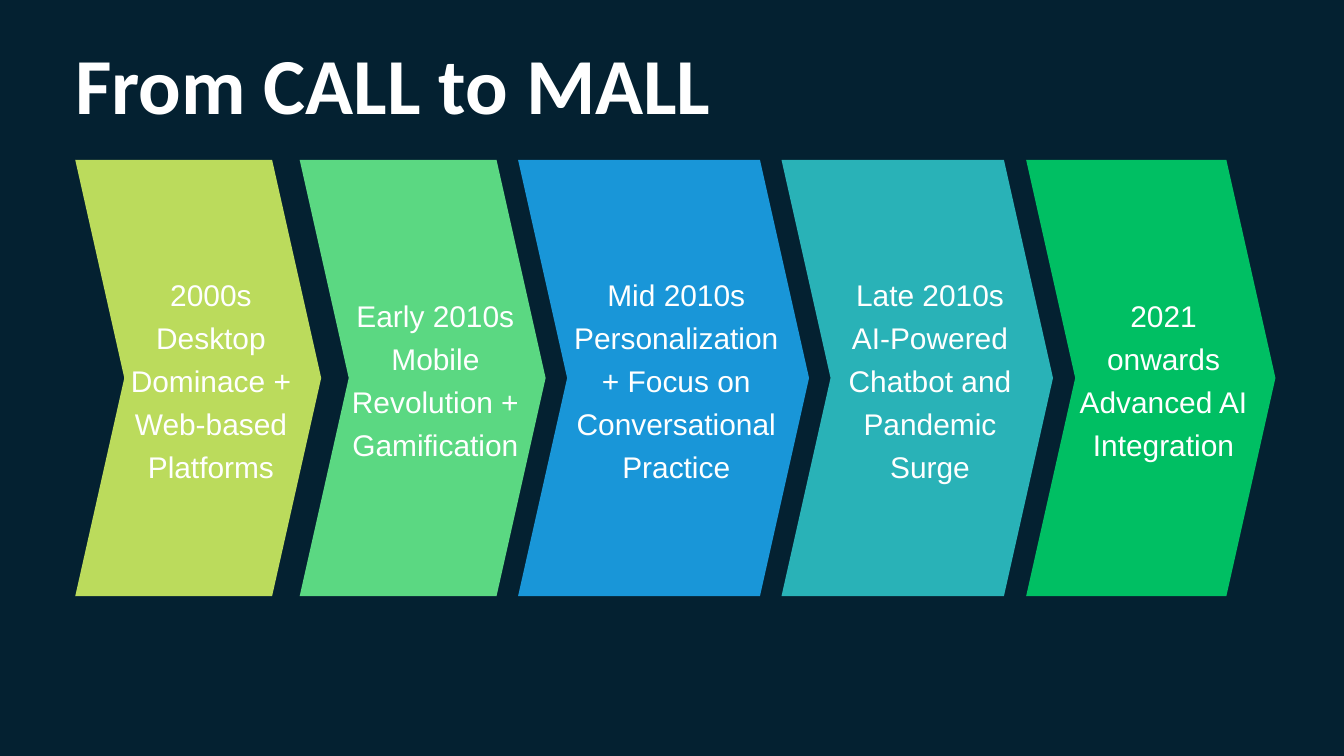
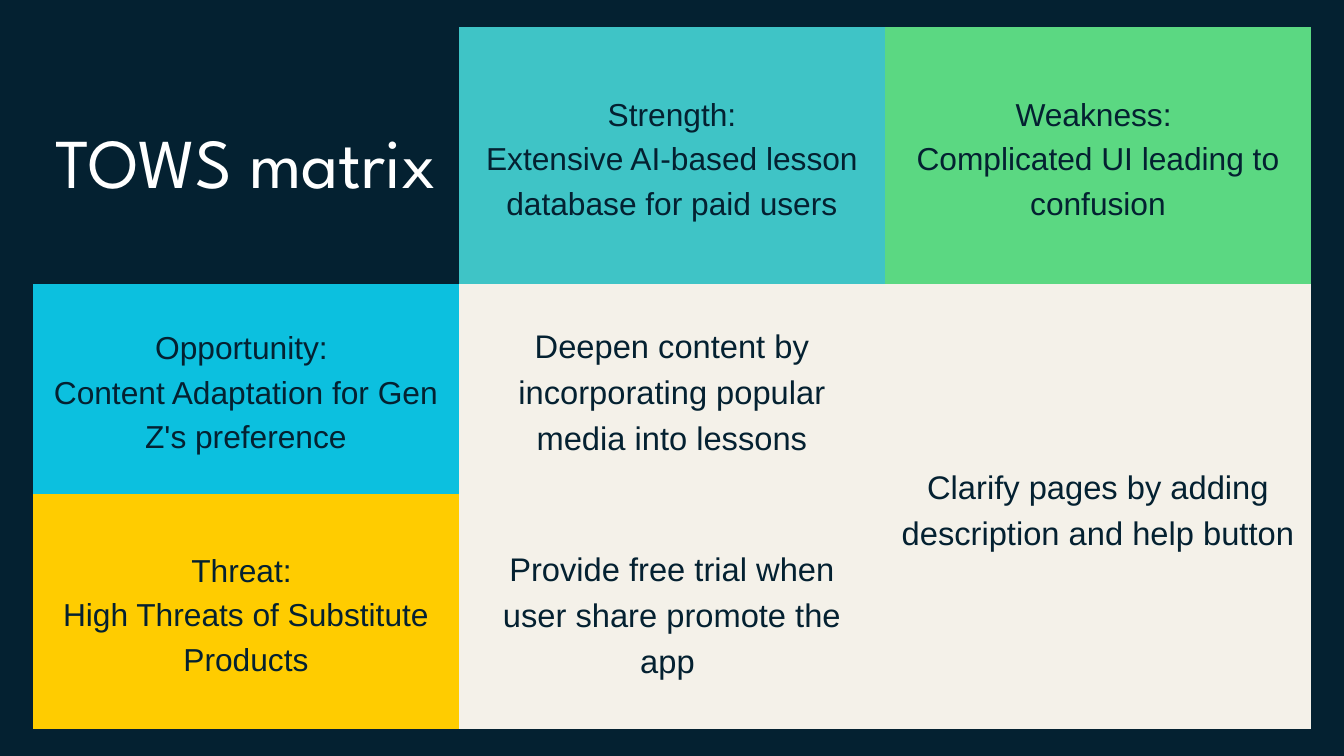
from dataclasses import dataclass

from lxml.etree import SubElement
from pptx import Presentation
from pptx.dml.color import RGBColor
from pptx.enum.text import MSO_ANCHOR as Anchor, MSO_AUTO_SIZE as AutoSize, PP_ALIGN as Align
from pptx.oxml.ns import qn
from pptx.slide import Slide
from pptx.table import _Cell as Cell
from pptx.text.text import TextFrame
from pptx.util import Inches, Length, Pt

COLORS = {
    "navy": "042131",
    "white": "FFFFFF",
    "lime": "BBDB5C",
    "green": "5BD882",
    "blue": "1996D8",
    "teal": "29B2B7",
    "emerald": "00BF63",
    "aqua": "3FC4C6",
    "cyan": "0CC0DF",
    "yellow": "FFCC00",
    "cream": "F4F1E9",
}
BODY_FONT = "Arial"
TITLE_ONLY, BLANK = 5, 6

ARROW_TOP, ARROW_HEIGHT, ARROW_POINT = Inches(2.38), Inches(6.49), Inches(0.73)
LABEL_TOP, LABEL_HEIGHT = Inches(2.34), Inches(6.53)
LABEL_INDENT, LABEL_TRIM = Inches(0.65), Inches(0.92)


@dataclass(frozen=True)
class TextStyle:
    size: float
    color: str = "navy"
    font: str = BODY_FONT
    bold: bool = False
    align: Align = Align.CENTER
    spacing: float | Length = 1.0
    inset: float = 0.0


@dataclass(frozen=True)
class Era:
    left: float
    width: float
    color: str
    text: str


@dataclass(frozen=True)
class MatrixCell:
    row: int
    column: int
    text: str
    style: TextStyle
    color: str | None = None


HEADLINE = TextStyle(85, "white", "Calibri", bold=True, align=Align.LEFT)
ERA_LABEL = TextStyle(32, "white", spacing=1.2, inset=0.06)
MATRIX_TITLE = TextStyle(75, "white", "League Spartan", spacing=Pt(105), inset=0.21)
FACTOR = TextStyle(34, spacing=Pt(47.6), inset=0.21)
STRATEGY = TextStyle(35, spacing=Pt(49), inset=0.21)

ERAS = [
    Era(1.12, 3.66, "lime", "2000s\nDesktop Dominace + Web-based Platforms"),
    Era(4.46, 3.66, "green", "Early 2010s\nMobile Revolution + Gamification"),
    Era(7.71, 4.33, "blue", "Mid 2010s\nPersonalization+ Focus on Conversational Practice"),
    Era(11.63, 4.04, "teal", "Late 2010s\nAI-Powered Chatbot and Pandemic Surge"),
    Era(15.27, 3.71, "emerald", "2021 onwards\nAdvanced AI Integration"),
]

MATRIX = [
    MatrixCell(0, 0, "TOWS matrix ", MATRIX_TITLE),
    MatrixCell(0, 1, "Strength:\nExtensive AI-based lesson database for paid users", FACTOR, "aqua"),
    MatrixCell(0, 2, "Weakness: \nComplicated UI leading to confusion", FACTOR, "green"),
    MatrixCell(1, 0, "Opportunity: \nContent Adaptation for Gen Z's preference", FACTOR, "cyan"),
    MatrixCell(1, 1, "Deepen content by incorporating popular media into lessons", STRATEGY, "cream"),
    MatrixCell(1, 2, "Clarify pages by adding description and help button ", STRATEGY, "cream"),
    MatrixCell(2, 0, "Threat: \nHigh Threats of Substitute Products", FACTOR, "yellow"),
    MatrixCell(2, 1, "Provide free trial when user share promote the app ", STRATEGY, "cream"),
]
ROW_HEIGHTS = [3.82, 3.13, 3.5]
COLUMN_WIDTH = 6.34


def rgb(name: str) -> RGBColor:
    return RGBColor.from_string(COLORS[name])


def write_text(frame: TextFrame, text: str, style: TextStyle) -> None:
    frame.text = text
    for para in frame.paragraphs:
        para.alignment = style.align
        para.line_spacing = style.spacing
        for span in para.runs:
            span.font.name = style.font
            span.font.size = Pt(style.size)
            span.font.bold = style.bold
            span.font.color.rgb = rgb(style.color)


def set_margins(target: TextFrame | Cell, inset: float) -> None:
    target.margin_left = target.margin_right = Inches(inset)
    target.margin_top = target.margin_bottom = Inches(inset)
    target.vertical_anchor = Anchor.MIDDLE


def fill_frame(frame: TextFrame, text: str, style: TextStyle) -> None:
    write_text(frame, text, style)
    set_margins(frame, style.inset)
    frame.word_wrap = True
    frame.auto_size = AutoSize.NONE


def add_era(page: Slide, era: Era) -> None:
    group = page.shapes.add_group_shape()
    left, width = Inches(era.left), Inches(era.width)
    right, bottom = left + width, ARROW_TOP + ARROW_HEIGHT
    middle = ARROW_TOP + ARROW_HEIGHT // 2
    outline = group.shapes.build_freeform(left, ARROW_TOP)
    outline.add_line_segments([
        (right - ARROW_POINT, ARROW_TOP),
        (right, middle),
        (right - ARROW_POINT, bottom),
        (left, bottom),
        (left + ARROW_POINT, middle),
    ])
    arrow = outline.convert_to_shape()
    arrow.shadow.inherit = False
    arrow.fill.solid()
    arrow.fill.fore_color.rgb = rgb(era.color)
    arrow.line.fill.background()

    label = group.shapes.add_textbox(
        left + LABEL_INDENT, LABEL_TOP, width - LABEL_TRIM, LABEL_HEIGHT
    )
    fill_frame(label.text_frame, era.text, ERA_LABEL)


def clear_borders(cell: Cell) -> None:
    properties = cell._tc.get_or_add_tcPr()
    for side in ("lnL", "lnR", "lnT", "lnB"):
        border = SubElement(properties, qn(f"a:{side}"), w="0")
        SubElement(border, qn("a:noFill"))


def fill_cell(cell: Cell, entry: MatrixCell) -> None:
    write_text(cell.text_frame, entry.text, entry.style)
    set_margins(cell, entry.style.inset)
    if entry.color:
        cell.fill.solid()
        cell.fill.fore_color.rgb = rgb(entry.color)
    else:
        cell.fill.background()


def add_timeline(deck: Presentation) -> None:
    page = deck.slides.add_slide(deck.slide_layouts[TITLE_ONLY])
    title = page.shapes.title
    title.left, title.top = Inches(1.12), Inches(0.15)
    title.width, title.height = Inches(13.2), Inches(2.15)
    fill_frame(title.text_frame, "From CALL to MALL", HEADLINE)
    for era in ERAS:
        add_era(page, era)


def add_matrix(deck: Presentation) -> None:
    page = deck.slides.add_slide(deck.slide_layouts[BLANK])
    table = page.shapes.add_table(
        3, 3, Inches(0.49), Inches(0.4),
        Inches(3 * COLUMN_WIDTH), Inches(sum(ROW_HEIGHTS)),
    ).table
    table.first_row = table.horz_banding = False
    for column in table.columns:
        column.width = Inches(COLUMN_WIDTH)
    for row, height in zip(table.rows, ROW_HEIGHTS):
        row.height = Inches(height)
    for cell in table.iter_cells():
        clear_borders(cell)
    table.cell(1, 2).merge(table.cell(2, 2))
    for entry in MATRIX:
        fill_cell(table.cell(entry.row, entry.column), entry)


def main() -> None:
    deck = Presentation()
    deck.slide_width, deck.slide_height = Inches(20), Inches(11.25)
    backdrop = deck.slide_master.background.fill
    backdrop.solid()
    backdrop.fore_color.rgb = rgb("navy")
    add_timeline(deck)
    add_matrix(deck)
    deck.save("out.pptx")


if __name__ == "__main__":
    main()
